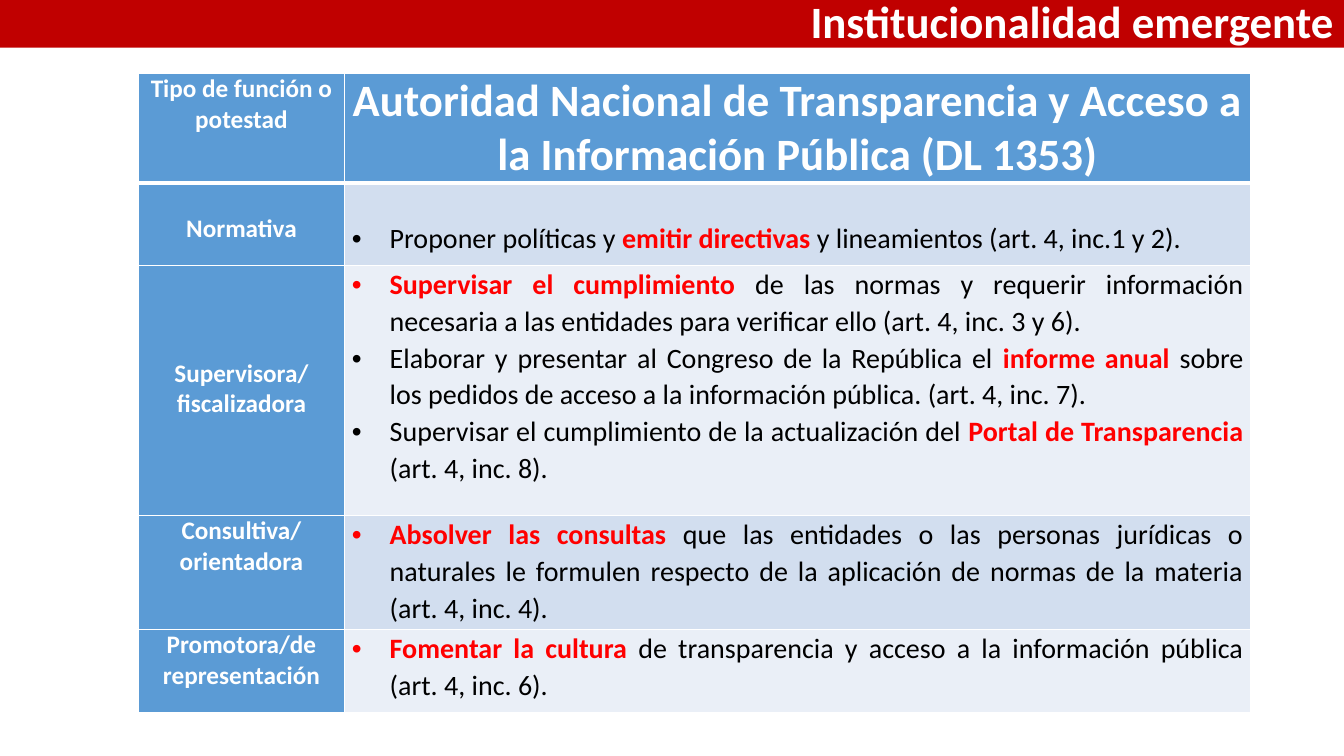
from dataclasses import dataclass

from lxml.etree import SubElement
from pptx import Presentation
from pptx.dml.color import RGBColor
from pptx.enum.shapes import MSO_SHAPE
from pptx.enum.text import MSO_ANCHOR, PP_ALIGN
from pptx.oxml.ns import qn
from pptx.slide import Slide
from pptx.table import Table, _Cell
from pptx.text.text import _Paragraph
from pptx.util import Pt


@dataclass(frozen=True)
class Theme:
    font: str = "Calibri"
    title_size: int = 32
    label_size: int = 18
    body_size: int = 20
    white: str = "FFFFFF"
    black: str = "000000"
    emphasis: str = "FF0000"
    banner: str = "C00000"
    header: str = "5B9BD5"
    bands: tuple[str, str] = ("D2DEEF", "EAEFF7")


@dataclass(frozen=True)
class FunctionRow:
    """One kind of power; asterisks in duties enclose emphasised words."""

    labels: tuple[str, ...]
    duties: tuple[str, ...]
    height: float
    label_top: float = 0
    duties_top: float = 0


THEME = Theme()
SLIDE_WIDTH, SLIDE_HEIGHT = 960, 540
BANNER_HEIGHT = 34
TABLE_LEFT, TABLE_TOP = 98.8, 52.5
COLUMN_WIDTHS = (147.4, 647.2)
HEADER_HEIGHT = 75.6
CELL_MARGIN = 5.2
BULLET_INDENT = 27

HEADINGS = (
    ("Tipo de función o potestad", THEME.label_size),
    ("Autoridad Nacional de Transparencia y Acceso a la Información Pública (DL 1353)",
     THEME.title_size),
)
ROWS = (
    FunctionRow(
        ("Normativa",),
        ("Proponer políticas y *emitir directivas *y lineamientos (art. 4, inc.1 y 2).",),
        59, label_top=22, duties_top=26,
    ),
    FunctionRow(
        ("Supervisora/", "fiscalizadora"),
        (
            "*Supervisar el cumplimiento *de las normas y requerir información necesaria "
            "a las entidades para verificar ello (art. 4, inc. 3 y 6).",
            "Elaborar y presentar al Congreso de la República el *informe anual *sobre "
            "los pedidos de acceso a la información pública. (art. 4, inc. 7).",
            "Supervisar el cumplimiento de la actualización del "
            "*Portal de Transparencia* (art. 4, inc. 8).",
        ),
        178.6, label_top=66,
    ),
    FunctionRow(
        ("Consultiva/", "orientadora"),
        ("*Absolver las consultas *que las entidades o las personas jurídicas o naturales "
         "le formulen respecto de la aplicación de normas de la materia (art. 4, inc. 4).",),
        81.4,
    ),
    FunctionRow(
        ("Promotora/de representación",),
        ("*Fomentar la cultura *de transparencia y acceso a la información pública "
         "(art. 4, inc. 6).",),
        59,
    ),
)


def color(value: str) -> RGBColor:
    return RGBColor.from_string(value)


def set_font(paragraph: _Paragraph, size: int) -> None:
    paragraph.font.name = THEME.font
    paragraph.font.size = Pt(size)


def write_heading(paragraph: _Paragraph, text: str, size: int, alignment: PP_ALIGN) -> None:
    paragraph.text = text
    paragraph.alignment = alignment
    set_font(paragraph, size)
    paragraph.font.bold = True
    paragraph.font.color.rgb = color(THEME.white)


def write_duty(paragraph: _Paragraph, text: str) -> None:
    paragraph.alignment = PP_ALIGN.JUSTIFY
    paragraph.line_spacing = 1.07
    properties = paragraph._p.get_or_add_pPr()
    properties.set("marL", str(Pt(BULLET_INDENT)))
    properties.set("indent", str(-Pt(BULLET_INDENT)))
    SubElement(properties, qn("a:buFont"), typeface="Arial")
    SubElement(properties, qn("a:buChar"), char="•")
    set_font(paragraph, THEME.body_size)
    for index, part in enumerate(text.split("*")):
        if part:
            emphasised = index % 2 == 1
            run = paragraph.add_run()
            run.text = part
            run.font.bold = emphasised
            run.font.color.rgb = color(THEME.emphasis if emphasised else THEME.black)


def style_cell(cell: _Cell, fill: str, top: float = 0, bottom_border: float = 1,
               top_border: float = 1) -> None:
    cell.margin_left = cell.margin_right = Pt(CELL_MARGIN)
    cell.margin_top, cell.margin_bottom = Pt(top), Pt(0)
    properties = cell._tc.get_or_add_tcPr()
    borders = {"L": 1, "R": 1, "T": top_border, "B": bottom_border}
    for side, width in borders.items():
        line = SubElement(properties, qn(f"a:ln{side}"), w=str(Pt(width)))
        line_fill = SubElement(line, qn("a:solidFill"))
        SubElement(line_fill, qn("a:srgbClr"), val=THEME.white)
    cell.fill.solid()
    cell.fill.fore_color.rgb = color(fill)


def add_paragraphs(cell: _Cell, count: int) -> tuple[_Paragraph, ...]:
    """Extend the cell to the given number of paragraphs and return them."""
    for _ in range(count - 1):
        cell.text_frame.add_paragraph()
    return cell.text_frame.paragraphs


def fill_row(table: Table, number: int, row: FunctionRow) -> None:
    table.rows[number].height = Pt(row.height)
    label_cell, duties_cell = table.cell(number, 0), table.cell(number, 1)
    top_border = 3 if number == 1 else 1
    style_cell(label_cell, THEME.header, row.label_top, top_border=top_border)
    style_cell(duties_cell, THEME.bands[(number - 1) % 2], row.duties_top,
               top_border=top_border)
    for paragraph, label in zip(add_paragraphs(label_cell, len(row.labels)), row.labels):
        write_heading(paragraph, label, THEME.label_size, PP_ALIGN.CENTER)
    duty_paragraphs = add_paragraphs(duties_cell, len(row.duties))
    for paragraph, duty in zip(duty_paragraphs, row.duties):
        write_duty(paragraph, duty)
    duty_paragraphs[-1].space_after = Pt(8)


def add_functions_table(slide: Slide) -> None:
    height = HEADER_HEIGHT + sum(row.height for row in ROWS)
    table = slide.shapes.add_table(
        len(ROWS) + 1, len(COLUMN_WIDTHS), Pt(TABLE_LEFT), Pt(TABLE_TOP),
        Pt(sum(COLUMN_WIDTHS)), Pt(height),
    ).table
    table.horz_banding = False
    for column, width in zip(table.columns, COLUMN_WIDTHS):
        column.width = Pt(width)
    table.rows[0].height = Pt(HEADER_HEIGHT)
    for cell, (text, size) in zip(table.rows[0].cells, HEADINGS):
        style_cell(cell, THEME.header, bottom_border=3)
        write_heading(cell.text_frame.paragraphs[0], text, size, PP_ALIGN.CENTER)
    for number, row in enumerate(ROWS, start=1):
        fill_row(table, number, row)


def add_banner(slide: Slide) -> None:
    shape = slide.shapes.add_shape(
        MSO_SHAPE.RECTANGLE, Pt(0), Pt(0), Pt(SLIDE_WIDTH), Pt(BANNER_HEIGHT))
    shape.shadow.inherit = False
    shape.fill.solid()
    shape.fill.fore_color.rgb = color(THEME.banner)
    shape.line.fill.background()
    shape.text_frame.word_wrap = True
    shape.text_frame.vertical_anchor = MSO_ANCHOR.MIDDLE
    paragraph = shape.text_frame.paragraphs[0]
    write_heading(paragraph, "Institucionalidad emergente", THEME.title_size, PP_ALIGN.RIGHT)
    paragraph.line_spacing = 0.9


def main() -> None:
    presentation = Presentation()
    presentation.slide_width, presentation.slide_height = Pt(SLIDE_WIDTH), Pt(SLIDE_HEIGHT)
    slide = presentation.slides.add_slide(presentation.slide_layouts[6])
    add_functions_table(slide)
    add_banner(slide)
    presentation.save("out.pptx")


if __name__ == "__main__":
    main()
